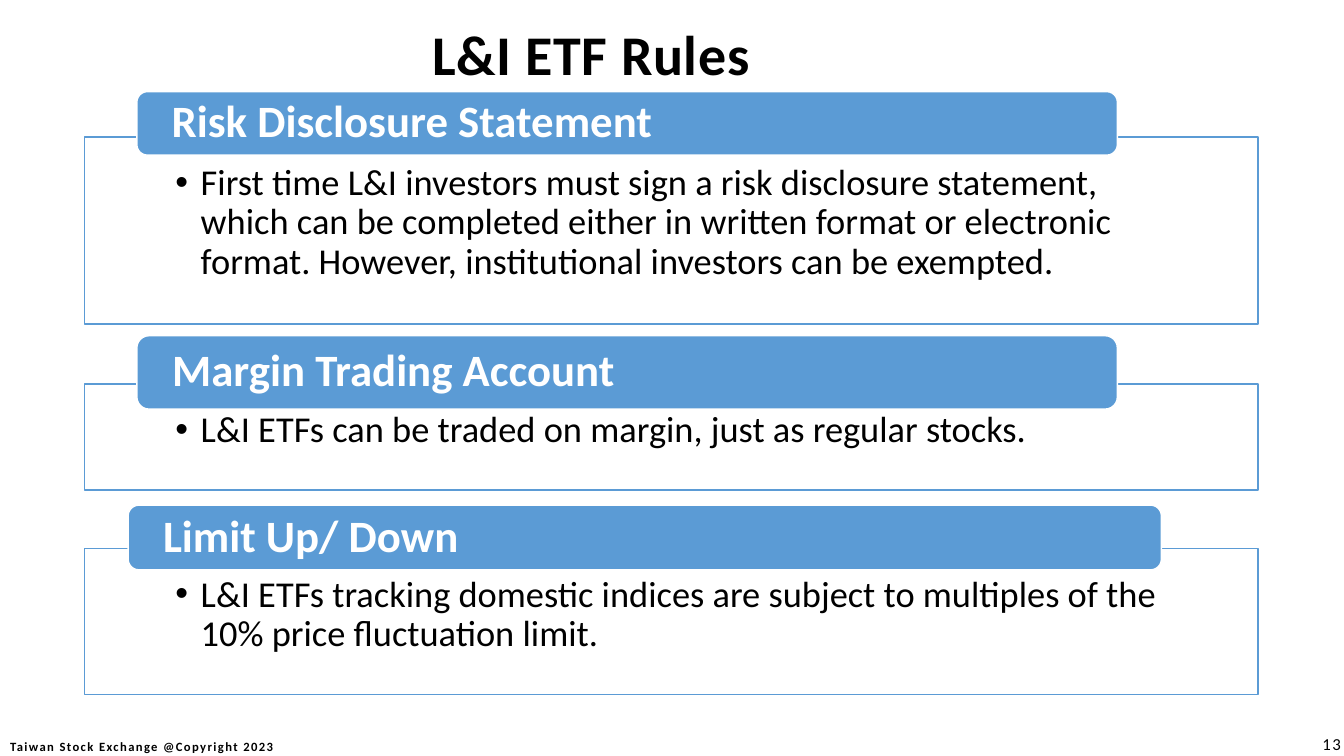
from lxml.etree import SubElement
from pptx import Presentation
from pptx.dml.color import RGBColor
from pptx.enum.shapes import MSO_SHAPE
from pptx.enum.text import MSO_ANCHOR, PP_ALIGN
from pptx.oxml.ns import qn
from pptx.util import Cm, Pt

BLUE, WHITE, BLACK = "5B9BD5", "FFFFFF", "000000"


def rgb(code):
    return RGBColor.from_string(code)


def write(box, text, size, color=BLACK, bold=False, align=PP_ALIGN.LEFT,
          anchor=MSO_ANCHOR.MIDDLE, insets=(0, 0, 0, 0), line=1.0,
          spacing=0, bullet=False):
    """Fill a box with one paragraph; insets are left, top, right, bottom in cm."""
    frame = box.text_frame
    left, top, right, bottom = (Cm(inset) for inset in insets)
    frame_format = {"word_wrap": True, "vertical_anchor": anchor,
                    "margin_left": left, "margin_top": top,
                    "margin_right": right, "margin_bottom": bottom}
    for name, value in frame_format.items():
        setattr(frame, name, value)
    para = frame.paragraphs[0]
    para.alignment, para.line_spacing = align, line
    if bullet:
        properties = para._p.get_or_add_pPr()
        properties.set("marL", str(Cm(0.64)))
        properties.set("indent", str(Cm(-0.64)))
        SubElement(properties, qn("a:buFont")).set("typeface", "Arial")
        SubElement(properties, qn("a:buChar")).set("char", "•")
    span = para.add_run()
    span.text = text
    for name, value in {"name": "Calibri", "size": Pt(size), "bold": bold}.items():
        setattr(span.font, name, value)
    span.font.color.rgb = rgb(color)
    if spacing:
        span._r.get_or_add_rPr().set("spc", str(round(spacing * 100)))


deck = Presentation()
deck.slide_width, deck.slide_height = Cm(33.87), Cm(19.05)
page = deck.slides.add_slide(deck.slide_layouts[6])

# Footer and page number
footer = page.shapes.add_textbox(Cm(0), Cm(18.29), Cm(7.14), Cm(1.02 - 0.26))
footer.top, footer.height = Cm(18.55), Cm(0.5)
write(footer, "Taiwan Stock Exchange @Copyright 2023", 9, bold=True,
      align=PP_ALIGN.CENTER, spacing=1)
number = page.shapes.add_textbox(Cm(32.2), Cm(18.44), Cm(1.67), Cm(0.6))
write(number, "13", 12, align=PP_ALIGN.RIGHT, insets=(0, 0, 0.08, 0), spacing=1)

# Rules: heading, heading box (left, top, width, height), text, panel top and height
rules = [
    ("Risk Disclosure Statement", (3.45, 2.31, 24.71, 1.6),
     "First time L&I investors must sign a risk disclosure statement, which can "
     "be completed either in written format or electronic format. However, "
     "institutional investors can be exempted.", 3.45, 4.72),
    ("Margin Trading Account", (3.45, 8.46, 24.71, 1.85),
     "L&I ETFs can be traded on margin, just as regular stocks.", 9.68, 2.67),
    ("Limit Up/ Down", (3.23, 12.73, 26.04, 1.63),
     "L&I ETFs tracking domestic indices are subject to multiples of the 10% "
     "price fluctuation limit.", 13.82, 3.68),
]
for heading, heading_box, text, panel_top, panel_height in rules:
    panel = page.shapes.add_shape(MSO_SHAPE.RECTANGLE, Cm(2.13), Cm(panel_top),
                                  Cm(29.57), Cm(panel_height))
    bar = page.shapes.add_shape(MSO_SHAPE.ROUNDED_RECTANGLE,
                                *(Cm(length) for length in heading_box))
    for shape, fill, outline in ((panel, WHITE, BLUE), (bar, BLUE, WHITE)):
        shape.shadow.inherit = False
        shape.fill.solid()
        shape.fill.fore_color.rgb = rgb(fill)
        shape.line.color.rgb = rgb(outline)
        shape.line.width = Pt(1)
    write(panel, text, 26, anchor=MSO_ANCHOR.TOP, insets=(2.29, 0.69, 2.29, 0.5),
          line=0.9, bullet=True)
    write(bar, heading, 32, color=WHITE, bold=True, insets=(0.8, 0, 0.8, 0), line=0.9)

# Title
title = page.shapes.add_textbox(Cm(9.25), Cm(0.56), Cm(11.3), Cm(1.8))
write(title, "L&I ETF Rules", 40, bold=True, align=PP_ALIGN.CENTER,
      anchor=MSO_ANCHOR.TOP, insets=(0.25, 0.13, 0.25, 0.13), line=0.9, spacing=0.5)

deck.save("out.pptx")
